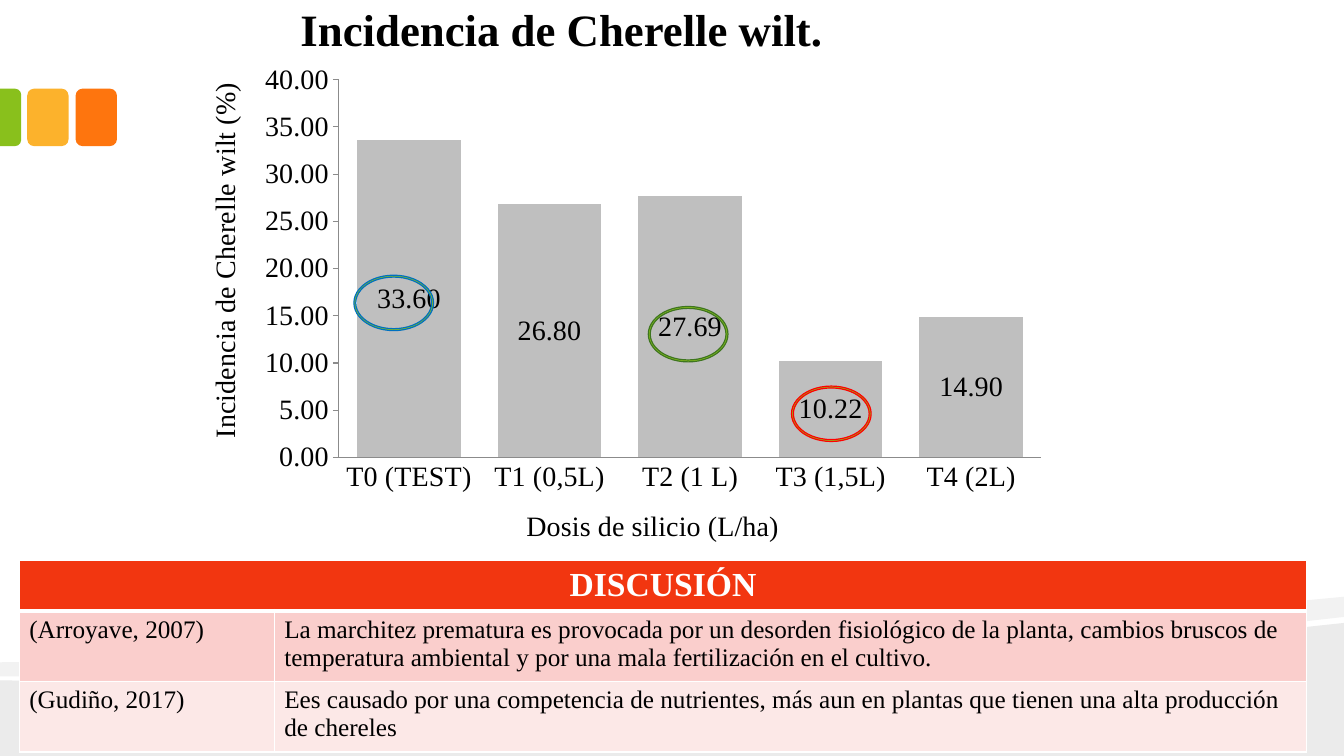
"""Builds the Cherelle wilt slide: bar chart, ringed values and a discussion table."""
from lxml import etree
from pptx import Presentation
from pptx import util as u
from pptx.chart.data import CategoryChartData
from pptx.dml.color import RGBColor
from pptx.enum import chart as ch, shapes, text
from pptx.oxml import parse_xml
from pptx.oxml.ns import nsdecls, qn

PX = 9144
FACE = "Times New Roman"
HUES = {
    "black": "000000", "white": "FFFFFF", "band": "EBEBEB", "wave": "F2F2F2",
    "orange": "FE750E", "amber": "FCB22C", "green": "89C01C", "bar": "BFBFBF",
    "axis": "8B8B8B", "red": "FF0000", "blue": "0070C0", "leaf": "3E7520",
    "head": "F23610", "rose": "FACECC", "blush": "FCE8E7",
}
RGB = {name: RGBColor.from_string(code) for name, code in HUES.items()}


def style(font, size, hue="black", bold=False):
    for key, val in {"name": FACE, "size": u.Pt(size), "bold": bold}.items():
        setattr(font, key, val)
    font.color.rgb = RGB[hue]


def paint(shape, fill, line=None):
    shape.shadow.inherit = False
    shape.fill.solid()
    shape.fill.fore_color.rgb = RGB[fill]
    if line:
        shape.line.color.rgb = RGB[line]
        shape.line.width = u.Pt(0.85)
    else:
        shape.line.fill.background()


deck = Presentation()
deck.slide_width, deck.slide_height = 1333 * PX, 750 * PX
slide = deck.slides.add_slide(deck.slide_layouts[5])
items = slide.shapes

waves = [
    ("band", [(1333, 618), (1333, 750), (0, 750), (0, 675), (176, 677), (440, 675),
              (733, 666), (1043, 649)]),
    ("wave", [(1333, 592), (1333, 612), (1191, 628), (1029, 641), (764, 656), (502, 666),
              (244, 671), (0, 671), (0, 657), (427, 654), (776, 639), (1068, 617)]),
]
for hue, dots in waves:
    pen = items.build_freeform(*dots[0], scale=PX)
    pen.add_line_segments(dots[1:], close=True)
    paint(pen.convert_to_shape(), hue)

kinds = shapes.MSO_SHAPE
tiles = [
    ("orange", kinds.ROUNDED_RECTANGLE, (75, 88, 41, 57), 0),
    ("amber", kinds.ROUNDED_RECTANGLE, (27, 88, 41, 57), 0),
    ("green", kinds.ROUND_2_SAME_RECTANGLE, (-18, 106, 57, 21), 90),
]
for hue, kind, box, turn in tiles:
    tile = items.add_shape(kind, *[v * PX for v in box])
    tile.rotation = turn
    if turn:
        tile.adjustments[0] = 0.29
    paint(tile, hue)

title = items.title
for key, val in {"left": 288, "top": -3, "width": 969, "height": 64}.items():
    setattr(title, key, val * PX)
frame = title.text_frame
frame.text = "Incidencia de Cherelle wilt."
for key, val in {"vertical_anchor": text.MSO_ANCHOR.TOP, "word_wrap": True,
                 "auto_size": text.MSO_AUTO_SIZE.NONE}.items():
    setattr(frame, key, val)
frame.paragraphs[0].alignment = text.PP_ALIGN.LEFT
style(frame.paragraphs[0].runs[0].font, 32, bold=True)

wide, high = 864, 511
data = CategoryChartData(number_format="0.00")
data.categories = ["T0 (TEST)", "T1 (0,5L)", "T2 (1 L)", "T3 (1,5L)", "T4 (2L)"]
data.add_series("Series 1", [33.6, 26.8, 27.69, 10.22, 14.9])
chart = items.add_chart(ch.XL_CHART_TYPE.COLUMN_CLUSTERED,
                        *[v * PX for v in (186, 53, wide, high)], data).chart
chart.has_legend = chart.has_title = False
style(chart.font, 20)
plot = chart.plots[0]
for key, val in {"gap_width": 36, "overlap": 68, "vary_by_categories": False,
                 "has_data_labels": True}.items():
    setattr(plot, key, val)
for key, val in {"show_value": True, "number_format": "0.00", "number_format_is_linked": False,
                 "position": ch.XL_LABEL_POSITION.CENTER}.items():
    setattr(plot.data_labels, key, val)
style(plot.data_labels.font, 20)
bars = plot.series[0].format.fill
bars.solid()
bars.fore_color.rgb = RGB["bar"]

ticks = ch.XL_TICK_MARK
axes = [
    (chart.category_axis, "Dosis de silicio (L/ha)", {"major_tick_mark": ticks.NONE}),
    (chart.value_axis, "Incidencia de Cherelle wilt (%)",
     {"major_tick_mark": ticks.OUTSIDE, "minimum_scale": 0, "maximum_scale": 40, "major_unit": 5}),
]
for axis, name, traits in axes:
    for key, val in {"has_major_gridlines": False, "minor_tick_mark": ticks.NONE, **traits}.items():
        setattr(axis, key, val)
    axis.format.line.color.rgb = RGB["axis"]
    style(axis.tick_labels.font, 20)
    label = axis.axis_title.text_frame
    label.text = name
    style(label.paragraphs[0].runs[0].font, 20)
labels = chart.value_axis.tick_labels
labels.number_format, labels.number_format_is_linked = "0.00", False

edge = {"xMode": "edge", "yMode": "edge"}
spots = [
    ("//c:plotArea", 0, {"layoutTarget": "inner", **edge,
                         "x": 150 / wide, "y": 26 / high, "w": 697 / wide, "h": 375 / high}),
    ("//c:catAx/c:title", 1, {**edge, "x": 331 / wide, "y": 446 / high}),
    ("//c:valAx/c:title", 1, {**edge, "x": 14 / wide, "y": 24 / high}),
]
for where, rank, vals in spots:
    host = chart.element.xpath(where)[0]
    for old in host.findall(qn("c:layout")):
        host.remove(old)
    plan = parse_xml(f"<c:layout {nsdecls('c')}/>")
    hand = etree.SubElement(plan, qn("c:manualLayout"))
    for key, val in vals.items():
        etree.SubElement(hand, qn(f"c:{key}")).set("val", str(val))
    host.insert(rank, plan)

rows = [
    ("head", 50, ["DISCUSIÓN", ""]),
    ("rose", 70, ["(Arroyave, 2007)",
                  "La marchitez prematura es provocada por un desorden fisiológico de la planta, "
                  "cambios bruscos de temperatura ambiental y por una mala fertilización en el cultivo."]),
    ("blush", 70, ["(Gudiño, 2017)",
                   "Ees causado por una competencia de nutrientes, más aun en plantas que tienen "
                   "una alta producción de chereles"]),
]
table = items.add_table(3, 2, *[v * PX for v in (19, 556, 1277, 190)]).table
for col, span in zip(table.columns, (253, 1024)):
    col.width = span * PX
table.cell(0, 0).merge(table.cell(0, 1))
for r, (hue, tall, words) in enumerate(rows):
    table.rows[r].height = tall * PX
    top = r == 0
    for c, word in enumerate(words):
        cell = table.cell(r, c)
        cell.fill.solid()
        cell.fill.fore_color.rgb = RGB[hue]
        props = cell._tc.get_or_add_tcPr()
        for n, side in enumerate("LRTB"):
            thick = 3 if (r, side) in [(0, "B"), (1, "T")] else 1
            props.insert(n, parse_xml(
                f'<a:ln{side} {nsdecls("a")} w="{u.Pt(thick)}"><a:solidFill>'
                f'<a:srgbClr val="{HUES["white"]}"/></a:solidFill></a:ln{side}>'))
        if word:
            cell.text = word
            cell.vertical_anchor = text.MSO_ANCHOR.MIDDLE if top else text.MSO_ANCHOR.TOP
            para = cell.text_frame.paragraphs[0]
            para.alignment = text.PP_ALIGN.CENTER if top else text.PP_ALIGN.LEFT
            style(para.runs[0].font, 24 if top else 18, "white" if top else "black", top)

for hue, left, above in [("red", 785, 383), ("blue", 351, 273), ("leaf", 643, 304)]:
    ring = items.add_shape(kinds.DONUT, *[v * PX for v in (left, above, 79, 55)])
    ring.adjustments[0] = 0.035
    paint(ring, "green", hue)

deck.save("out.pptx")
